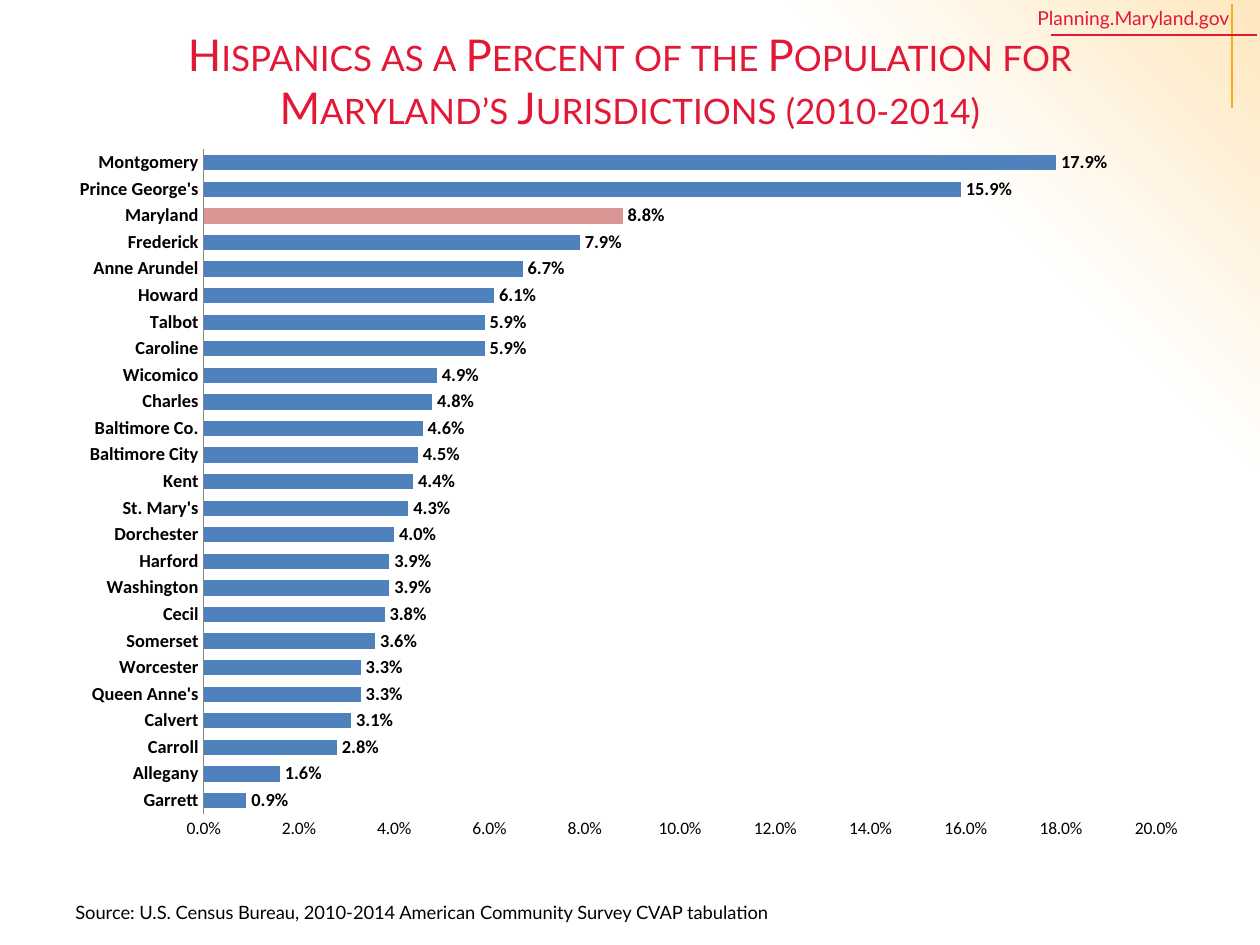
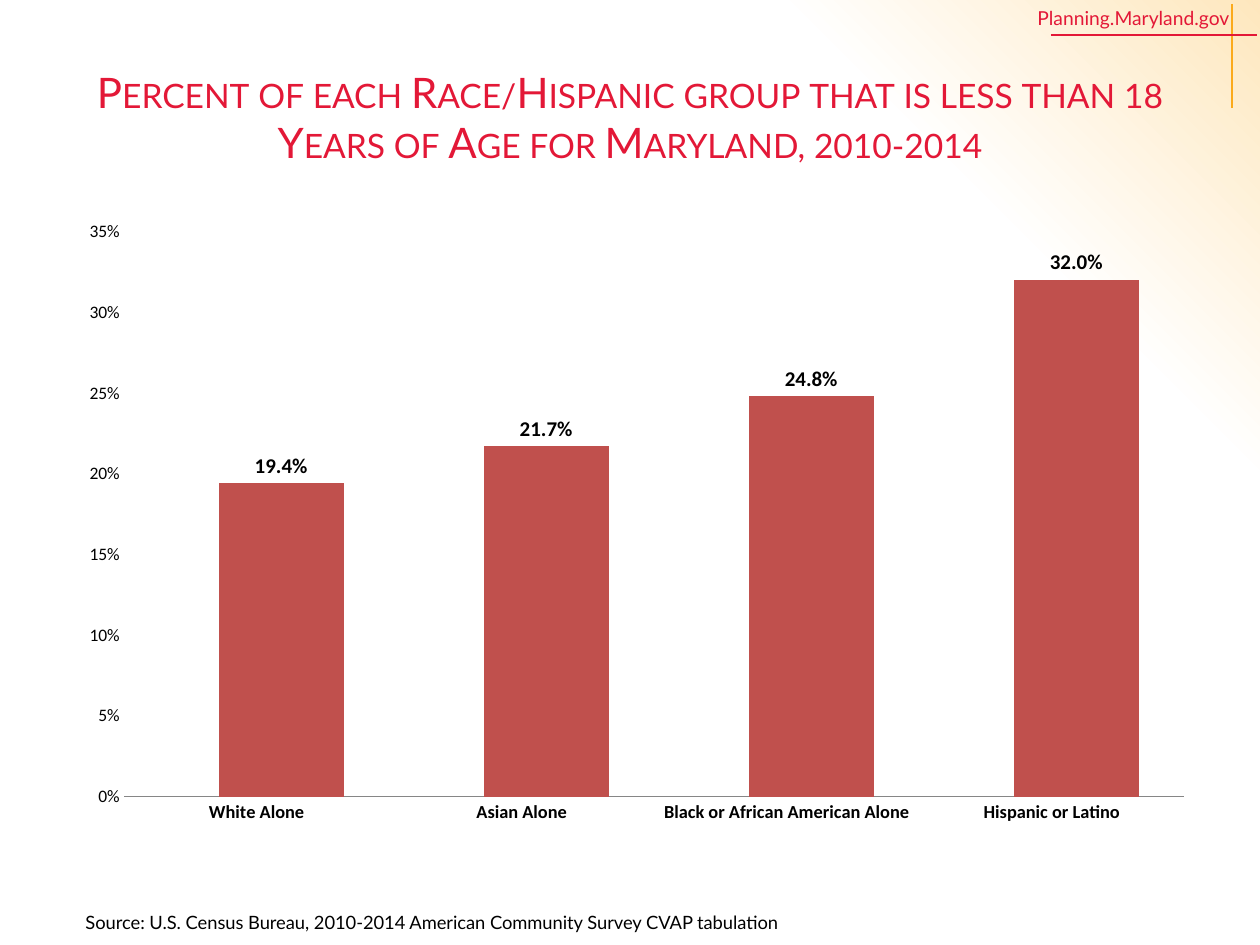
from dataclasses import dataclass

from lxml import etree
from pptx import Presentation
from pptx.chart.data import CategoryChartData
from pptx.dml.color import RGBColor
from pptx.enum import chart as charts, shapes, text
from pptx.oxml import parse_xml
from pptx.oxml.ns import nsdecls, qn
from pptx.util import Inches, Pt


@dataclass(frozen=True)
class Theme:
    red: str = "E31837"
    gold: str = "FBAA1B"
    glow: str = "FEE7BE"
    white: str = "FFFFFF"
    black: str = "000000"
    axis: str = "868686"
    blue: str = "4F81BD"
    pink: str = "D99694"
    brick: str = "C0504D"
    heading_font: str = "Lato"
    chart_font: str = "Calibri"
    site_size: float = 11
    source_size: float = 10.5
    tick_size: float = 10
    category_size: float = 10.5


THEME = Theme()
SITE = "Planning.Maryland.gov"
SOURCE = "Source: U.S. Census Bureau, 2010-2014 American Community Survey CVAP tabulation"

JURISDICTIONS = {
    "Garrett": 0.009, "Allegany": 0.016, "Carroll": 0.028, "Calvert": 0.031,
    "Queen Anne's": 0.033, "Worcester": 0.033, "Somerset": 0.036, "Cecil": 0.038,
    "Washington": 0.039, "Harford": 0.039, "Dorchester": 0.04, "St. Mary's": 0.043,
    "Kent": 0.044, "Baltimore City": 0.045, "Baltimore Co.": 0.046, "Charles": 0.048,
    "Wicomico": 0.049, "Caroline": 0.059, "Talbot": 0.059, "Howard": 0.061,
    "Anne Arundel": 0.067, "Frederick": 0.079, "Maryland": 0.088,
    "Prince George's": 0.159, "Montgomery": 0.179,
}
UNDER_18 = {
    "White Alone": 0.194, "Asian Alone": 0.217,
    "Black or African American Alone": 0.248, "Hispanic or Latino": 0.32,
}


def rgb(value):
    return RGBColor.from_string(value)


def inches(*lengths):
    return [Inches(length) for length in lengths]


def style_font(font, name, size, color, bold=False):
    font.name = name
    font.size = Pt(size)
    font.bold = bold
    font.color.rgb = rgb(color)


def paint_background(master):
    fill = master.background.fill
    fill.gradient()
    fill.gradient_angle = 225
    glow, fade = fill.gradient_stops
    glow.color.rgb = rgb(THEME.glow)
    glow.position = 0
    fade.color.rgb = rgb(THEME.white)
    fade.position = 0.22
    glow_color = next(master.background._cSld.iter(qn("a:srgbClr")))
    etree.SubElement(glow_color, qn("a:alpha")).set("val", "50000")


def add_rule(slide, start, end, color):
    rule = slide.shapes.add_connector(
        shapes.MSO_CONNECTOR.STRAIGHT, *inches(*start, *end))
    rule.line.color.rgb = rgb(color)
    rule.line.width = Pt(1)
    etree.SubElement(rule._element.spPr, qn("a:effectLst"))


def add_label(slide, box, wording, size, color, align, margins=None):
    frame = slide.shapes.add_textbox(*inches(*box)).text_frame
    frame.word_wrap = True
    if margins:
        (frame.margin_left, frame.margin_top,
         frame.margin_right, frame.margin_bottom) = inches(*margins)
    paragraph = frame.paragraphs[0]
    paragraph.text = wording
    paragraph.alignment = align
    style_font(paragraph.font, THEME.heading_font, size, color)


def add_header(slide):
    add_rule(slide, (9.78, 0.03), (9.78, 0.86), THEME.gold)
    add_rule(slide, (8.34, 0.28), (9.98, 0.28), THEME.red)
    add_label(slide, (7.34, 0.05, 2.42, 0.19), SITE, THEME.site_size, THEME.red,
              text.PP_ALIGN.RIGHT, (0.1, 0, 0, 0))


def add_source(slide, left, top):
    add_label(slide, (left, top, 8.08, 0.28), SOURCE, THEME.source_size,
              THEME.black, text.PP_ALIGN.LEFT)


def set_title(slide, wording, top, height, size):
    title = slide.shapes.title
    title.left, title.top, title.width, title.height = inches(0.5, top, 9, height)
    frame = title.text_frame
    frame.word_wrap = True
    frame.auto_size = text.MSO_AUTO_SIZE.NONE
    frame.vertical_anchor = text.MSO_ANCHOR.MIDDLE
    paragraph = frame.paragraphs[0]
    paragraph.text = wording
    paragraph.alignment = text.PP_ALIGN.CENTER
    style_font(paragraph.font, THEME.heading_font, size, THEME.red)
    paragraph.font._rPr.set("cap", "small")


def new_slide(deck, wording, top, height, size):
    slide = deck.slides.add_slide(deck.slide_layouts[5])
    add_header(slide)
    set_title(slide, wording, top, height, size)
    return slide


def place_plot(chart, x, y, w, h):
    plot_area = chart._chartSpace.chart.plotArea
    for old in plot_area.findall(qn("c:layout")):
        plot_area.remove(old)
    sizes = "".join(f'<c:{key} val="{value}"/>'
                    for key, value in zip("xywh", (x, y, w, h)))
    plot_area.insert(0, parse_xml(
        f'<c:layout {nsdecls("c")}><c:manualLayout><c:layoutTarget val="inner"/>'
        f'<c:xMode val="edge"/><c:yMode val="edge"/>{sizes}'
        '</c:manualLayout></c:layout>'))


def format_axes(chart, number_format, maximum, step):
    for axis in (chart.category_axis, chart.value_axis):
        axis.has_major_gridlines = False
        axis.major_tick_mark = axis.minor_tick_mark = charts.XL_TICK_MARK.NONE
    categories, values = chart.category_axis, chart.value_axis
    categories.format.line.color.rgb = rgb(THEME.axis)
    style_font(categories.tick_labels.font, THEME.chart_font,
               THEME.category_size, THEME.black, True)
    values.format.line.fill.background()
    values.minimum_scale = 0
    values.maximum_scale = maximum
    values.major_unit = step
    values.tick_labels.number_format = number_format
    values.tick_labels.number_format_is_linked = False


def label_bars(series, size):
    labels = series.data_labels
    labels.show_value = True
    labels.number_format = "0.0%"
    labels.number_format_is_linked = False
    labels.position = charts.XL_LABEL_POSITION.OUTSIDE_END
    style_font(labels.font, THEME.chart_font, size, THEME.black, True)


def add_percent_chart(slide, kind, box, categories, series_values, colors, gap, overlap):
    data = CategoryChartData(number_format="0.0%")
    data.categories = categories
    for number, values in enumerate(series_values, 1):
        data.add_series(f"Series {number}", values)
    chart = slide.shapes.add_chart(kind, *inches(*box), data).chart
    chart.has_legend = False
    chart.has_title = False
    style_font(chart.font, THEME.chart_font, THEME.tick_size, THEME.black)
    plot = chart.plots[0]
    plot.gap_width = gap
    plot.overlap = overlap
    plot.vary_by_categories = False
    for series, color in zip(plot.series, colors):
        series.invert_if_negative = False
        series.format.fill.solid()
        series.format.fill.fore_color.rgb = rgb(color)
    return chart


def add_jurisdictions_slide(deck):
    slide = new_slide(
        deck, "Hispanics as a Percent of the Population for Maryland’s "
        "Jurisdictions (2010-2014)", 0.08, 1.12, 25)
    names = list(JURISDICTIONS)
    chart = add_percent_chart(
        slide, charts.XL_CHART_TYPE.BAR_CLUSTERED, (0.5, 1.17, 9, 5.67), names,
        [JURISDICTIONS.values()], [THEME.blue], 75, -25)
    format_axes(chart, "0.0%", 0.2, 0.02)
    place_plot(chart, 0.124, 0.003, 0.84, 0.93)
    shares = chart.plots[0].series[0]
    label_bars(shares, 10.5)
    statewide = shares.points[names.index("Maryland")].format.fill
    statewide.solid()
    statewide.fore_color.rgb = rgb(THEME.pink)
    add_source(slide, 0.5, 7.1)


def add_under_18_slide(deck):
    slide = new_slide(
        deck, "Percent of each Race/Hispanic group that is less than 18 "
        "Years of Age for Maryland, 2010-2014", 0.3, 1.25, 24)
    chart = add_percent_chart(
        slide, charts.XL_CHART_TYPE.COLUMN_CLUSTERED, (0.5, 1.75, 9, 4.95),
        list(UNDER_18), [[None] * len(UNDER_18), UNDER_18.values()],
        [THEME.blue, THEME.brick], 73, 61)
    format_axes(chart, "0%", 0.35, 0.05)
    place_plot(chart, 0.054, 0.018, 0.935, 0.906)
    label_bars(chart.plots[0].series[1], 12)
    add_source(slide, 0.58, 7.18)


def main():
    deck = Presentation()
    deck.slide_width, deck.slide_height = inches(10, 7.5)
    paint_background(deck.slide_master)
    add_jurisdictions_slide(deck)
    add_under_18_slide(deck)
    deck.save("out.pptx")


if __name__ == "__main__":
    main()
